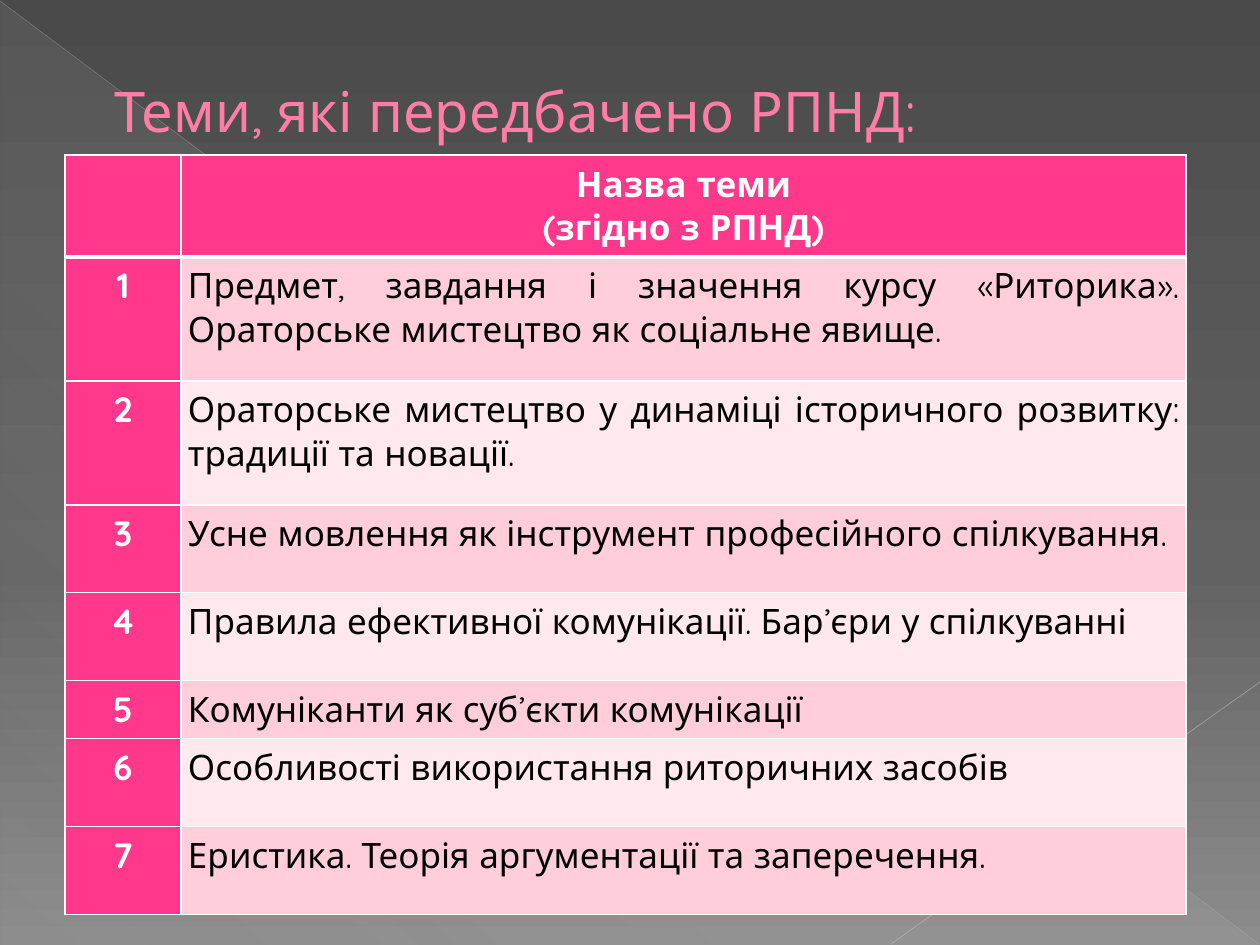
from lxml.etree import SubElement
from pptx import Presentation
from pptx.dml.color import RGBColor
from pptx.enum.shapes import MSO_CONNECTOR, MSO_SHAPE
from pptx.enum.text import MSO_ANCHOR, PP_ALIGN
from pptx.oxml import parse_xml
from pptx.oxml.ns import nsdecls, qn
from pptx.util import Pt

PX = 914400 / 126
FONT = "Quicksand"
COLORS = {
    "title": "FF7DA7", "outline": "B12761", "accent": "FF388C",
    "odd": "FFCEDA", "even": "FFE8EE", "white": "FFFFFF", "black": "000000",
    "triangle": "D2D2D2", "diagonal": "BFBFBF", "corner": "C6C6C6",
}
BACKGROUND = [(0, "4A4A4A", 100), (60, "626262", 100), (100, "8C8C8C", 100)]
TRIANGLE = [(0, COLORS["triangle"], 10), (70, COLORS["triangle"], 8),
            (100, COLORS["triangle"], 1)]
TITLE = "Теми, які передбачено РПНД:"
HEADING = ["Назва теми", "(згідно з РПНД)"]
TOPICS = [  # wording, row height
    ("Предмет, завдання і значення курсу «Риторика». "
     "Ораторське мистецтво як соціальне явище.", 124),
    ("Ораторське мистецтво у динаміці історичного розвитку: "
     "традиції та новації.", 124),
    ("Усне мовлення як інструмент професійного спілкування.", 88),
    ("Правила ефективної комунікації. Бар’єри у спілкуванні", 88),
    ("Комуніканти як суб’єкти комунікації", 58),
    ("Особливості використання риторичних засобів", 88),
    ("Еристика. Теорія аргументації та заперечення.", 88),
]


def px(value):
    return round(value * PX)


def color(name):
    return RGBColor.from_string(COLORS[name])


def solid_xml(hex_color, alpha=100):
    return (f'<a:solidFill {nsdecls("a")}><a:srgbClr val="{hex_color}">'
            f'<a:alpha val="{alpha * 1000}"/></a:srgbClr></a:solidFill>')


def gradient(stops, angle):
    marks = "".join(
        f'<a:gs pos="{pos * 1000}"><a:srgbClr val="{hex_color}">'
        f'<a:alpha val="{alpha * 1000}"/></a:srgbClr></a:gs>'
        for pos, hex_color, alpha in stops)
    return parse_xml(
        f'<a:gradFill {nsdecls("a")} rotWithShape="1"><a:gsLst>{marks}</a:gsLst>'
        f'<a:lin ang="{angle * 60000}" scaled="0"/></a:gradFill>')


def swap_fill(properties, new_fill):
    old_fill = properties.find(qn("a:solidFill"))
    properties.replace(old_fill, new_fill)


def add_span(para, text, size, name, bold=False):
    span = para.add_run()
    span.text = text
    span.font.name = FONT
    span.font.size = Pt(size)
    span.font.bold = bold
    span.font.color.rgb = color(name)
    return span


def add_diagonal(page, start, end, name, width, alpha):
    line = page.shapes.add_connector(
        MSO_CONNECTOR.STRAIGHT, *map(px, start), *map(px, end))
    line.line.width = Pt(width)
    line.line.color.rgb = color(name)
    properties = line._element.spPr
    swap_fill(properties.find(qn("a:ln")),
              parse_xml(solid_xml(COLORS[name], alpha)))
    SubElement(properties, qn("a:effectLst"))


def add_backdrop(page, width, height):
    # Background gradient
    page.background.fill.solid()
    swap_fill(page._element.cSld.get_or_add_bgPr(), gradient(BACKGROUND, 90))
    # Translucent triangle
    triangle = page.shapes.add_shape(
        MSO_SHAPE.RIGHT_TRIANGLE, px(1), px(2), px(width - 2), px(height - 2))
    triangle.shadow.inherit = False
    triangle.line.fill.background()
    triangle.fill.solid()
    swap_fill(triangle._element.spPr, gradient(TRIANGLE, 133))
    # Thin diagonals
    add_diagonal(page, (0, 1), (width - 1, height - 1), "diagonal", 0.39, 35)
    add_diagonal(page, (width, 682), (891, height - 1), "corner", 0.47, 45)


def add_title(page, left, top, width, height):
    title = page.shapes.title
    page.shapes._spTree.append(title._element)  # above the backdrop
    title.left, title.top = px(left), px(top)
    title.width, title.height = px(width), px(height)
    frame = title.text_frame
    frame.word_wrap = True
    frame.vertical_anchor = MSO_ANCHOR.MIDDLE
    para = frame.paragraphs[0]
    para.alignment = PP_ALIGN.LEFT
    para._p.get_or_add_pPr().set("marL", str(px(67)))
    span = add_span(para, TITLE, 32, "title")
    # Outline and soft shadow of the letters
    properties = span._r.get_or_add_rPr()
    properties.insert(0, parse_xml(
        f'<a:ln {nsdecls("a")} w="6350">{solid_xml(COLORS["outline"])}</a:ln>'))
    properties.find(qn("a:solidFill")).addnext(parse_xml(
        f'<a:effectLst {nsdecls("a")}><a:outerShdw blurRad="38100" dist="38100" '
        'dir="2700000" algn="tl"><a:srgbClr val="000000"><a:alpha val="45000"/>'
        '</a:srgbClr></a:outerShdw></a:effectLst>'))


def style_cell(cell, fill, top=1, bottom=1):
    cell.margin_left = cell.margin_right = px(7)
    cell.margin_top = cell.margin_bottom = px(7)
    cell.fill.solid()
    cell.fill.fore_color.rgb = color(fill)
    properties = cell._tc.get_or_add_tcPr()
    edges = {"lnL": 1, "lnR": 1, "lnT": top, "lnB": bottom}
    for place, (edge, width) in enumerate(edges.items()):
        properties.insert(place, parse_xml(
            f'<a:{edge} {nsdecls("a")} w="{Pt(width)}">'
            f'{solid_xml(COLORS["white"])}</a:{edge}>'))


def write_cell(cell, lines, align, name, bold):
    frame = cell.text_frame
    for place, text in enumerate(lines):
        para = frame.add_paragraph() if place else frame.paragraphs[0]
        para.alignment = align
        add_span(para, text, 20, name, bold)


def add_topics(page, left, top, width, header_height, number_width):
    heights = [header_height] + [height for _, height in TOPICS]
    table = page.shapes.add_table(
        len(heights), 2, px(left), px(top), px(width), px(sum(heights))).table
    table.columns[0].width = px(number_width)
    table.columns[1].width = px(width - number_width)
    for row, height in zip(table.rows, heights):
        row.height = px(height)
    # Header row
    for column in range(2):
        style_cell(table.cell(0, column), "accent", bottom=3)
    write_cell(table.cell(0, 1), HEADING, PP_ALIGN.CENTER, "white", True)
    # Numbered topics in alternating tints
    for number, (topic, _) in enumerate(TOPICS, start=1):
        edge = 3 if number == 1 else 1
        label, body = table.cell(number, 0), table.cell(number, 1)
        style_cell(label, "accent", top=edge)
        style_cell(body, "odd" if number % 2 else "even", top=edge)
        write_cell(label, [str(number)], PP_ALIGN.CENTER, "white", True)
        write_cell(body, [topic], PP_ALIGN.JUSTIFY, "black", False)


def main():
    deck = Presentation()
    deck.slide_width, deck.slide_height = px(1260), px(945)
    page = deck.slides.add_slide(deck.slide_layouts[5])
    add_backdrop(page, 1260, 945)
    add_title(page, 35, 66, 1134, 89)
    add_topics(page, 65, 155, 1121, 101, 116)
    deck.save("out.pptx")


if __name__ == "__main__":
    main()
